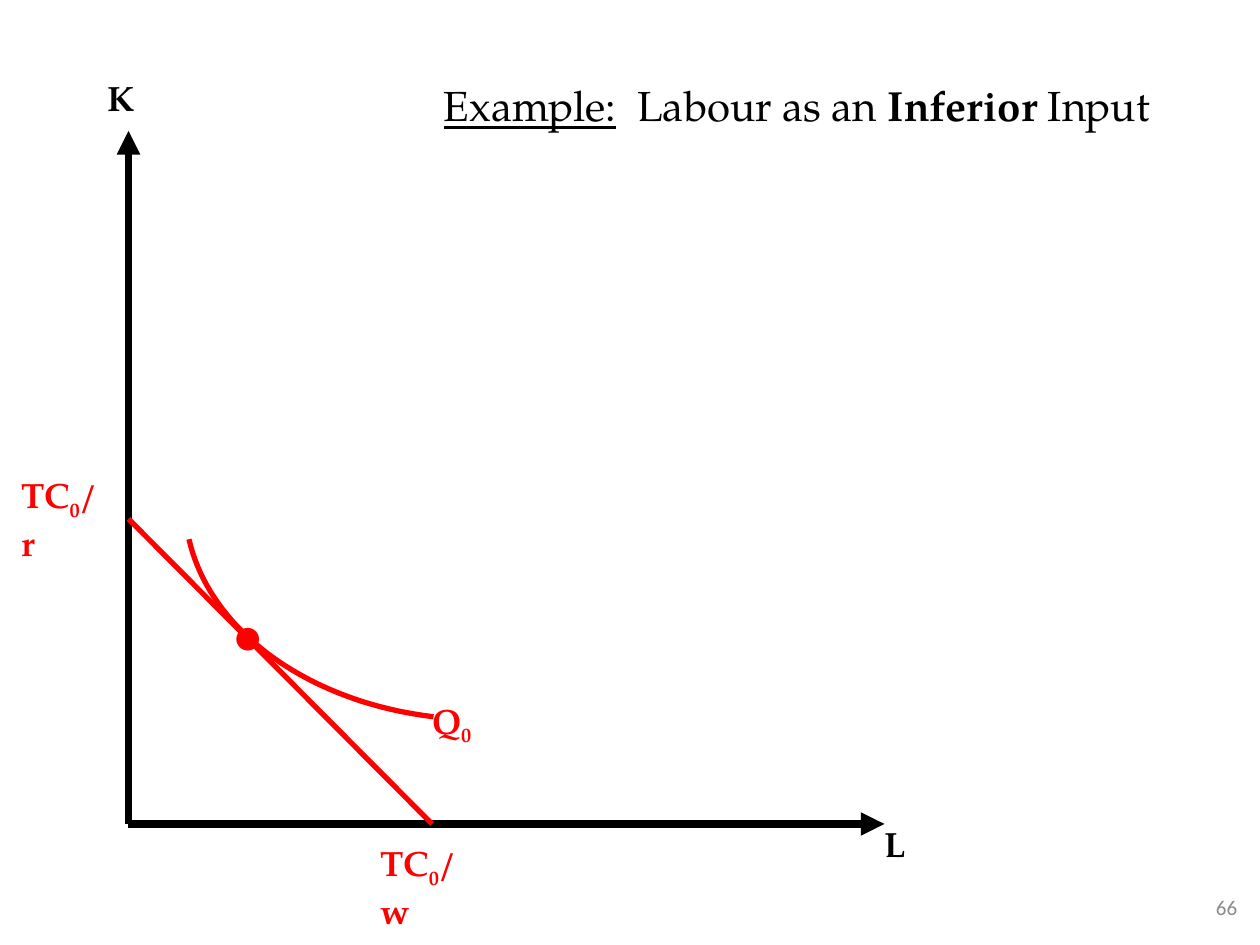
from lxml import etree
from pptx import Presentation
from pptx.dml.color import RGBColor
from pptx.enum.shapes import MSO_CONNECTOR
from pptx.enum.text import MSO_ANCHOR, MSO_AUTO_SIZE, PP_ALIGN
from pptx.oxml.ns import qn
from pptx.util import Cm, Pt

STRAIGHT = MSO_CONNECTOR.STRAIGHT
TOP, MIDDLE = MSO_ANCHOR.TOP, MSO_ANCHOR.MIDDLE
LEFT, RIGHT = PP_ALIGN.LEFT, PP_ALIGN.RIGHT
NO_AUTOSIZE = MSO_AUTO_SIZE.NONE

COLOURS = {"axis": "000000", "cost": "FF0000", "number": "8C8C8C"}
SERIF = "TeX Gyre Pagella"

# Diagram geometry in centimetres
ORIGIN = (2.59, 16.61)
LABOUR_END = (17.83, ORIGIN[1])
CAPITAL_END = (ORIGIN[0], 2.64)
COST_ON_CAPITAL = (ORIGIN[0], 10.46)
COST_ON_LABOUR = (8.71, ORIGIN[1])
ISOQUANT = ((8.74, 14.45), (6.22, 14.15), (4.24, 12.73), (3.81, 10.87))
CURVE_STEPS = 40


def colour(name):
    return RGBColor.from_string(COLOURS[name])


def add_run(paragraph, text, size, colour_name, font=SERIF, bold=False,
            underline=False, subscript=False):
    run = paragraph.add_run()
    run.text = text
    run.font.name = font
    run.font.size = Pt(size)
    run.font.bold = bold
    run.font.underline = underline
    run.font.color.rgb = colour(colour_name)
    if subscript:
        run.font._element.set("baseline", "-25000")


def add_text_box(slide, left, top, width, height, wrap=True):
    shape = slide.shapes.add_textbox(Cm(left), Cm(top), Cm(width), Cm(height))
    shape.text_frame.word_wrap = wrap
    return shape.text_frame


def add_label(slide, position, colour_name, text, subscript="", suffix="",
              wrap=False):
    frame = add_text_box(slide, *position, wrap=wrap)
    paragraph = frame.paragraphs[0]
    for part in (text, subscript, suffix):
        if part:
            add_run(paragraph, part, 20, colour_name, bold=True,
                    subscript=part == subscript)


def add_line(slide, start, end, colour_name, width, arrow=False):
    connector = slide.shapes.add_connector(
        STRAIGHT, *(Cm(value) for value in start + end))
    connector.line.color.rgb = colour(colour_name)
    connector.line.width = Pt(width)
    if arrow:
        line = connector.line._get_or_add_ln()
        etree.SubElement(line, qn("a:tailEnd"), type="triangle")
    etree.SubElement(connector._element.spPr, qn("a:effectLst"))


def bezier_point(controls, t):
    weights = ((1 - t) ** 3, 3 * t * (1 - t) ** 2, 3 * t ** 2 * (1 - t), t ** 3)
    return tuple(Cm(sum(weight * control[axis]
                        for weight, control in zip(weights, controls)))
                 for axis in (0, 1))


def add_curve(slide, controls, colour_name, width):
    points = [bezier_point(controls, step / CURVE_STEPS)
              for step in range(CURVE_STEPS + 1)]
    builder = slide.shapes.build_freeform(*points[0])
    builder.add_line_segments(points[1:], close=False)
    shape = builder.convert_to_shape()
    shape.shadow.inherit = False
    shape.fill.background()
    shape.line.color.rgb = colour(colour_name)
    shape.line.width = Pt(width)


def add_title(slide):
    title = slide.shapes.title
    title.left, title.top, title.width, title.height = (
        Cm(8.69), Cm(1.47), Cm(15.24), Cm(1.27))
    frame = title.text_frame
    frame.auto_size = NO_AUTOSIZE
    frame.vertical_anchor = TOP
    paragraph = frame.paragraphs[0]
    paragraph.alignment = LEFT
    add_run(paragraph, "Example:", 24, "axis", underline=True)
    add_run(paragraph, "  Labour as an ", 24, "axis")
    add_run(paragraph, "Inferior", 24, "axis", bold=True)
    add_run(paragraph, " Input", 24, "axis")


def add_slide_number(slide, number):
    frame = add_text_box(slide, 23.29, 17.78, 1.9, 1.02)
    frame.vertical_anchor = MIDDLE
    paragraph = frame.paragraphs[0]
    paragraph.alignment = RIGHT
    add_run(paragraph, number, 12, "number", font="Calibri")


def main():
    presentation = Presentation()
    presentation.slide_width, presentation.slide_height = Cm(25.4), Cm(19.05)
    slide = presentation.slides.add_slide(presentation.slide_layouts[5])

    add_slide_number(slide, "66")
    add_title(slide)

    # Axes
    add_line(slide, ORIGIN, LABOUR_END, "axis", 4.5, arrow=True)
    add_line(slide, ORIGIN, CAPITAL_END, "axis", 4.5, arrow=True)
    add_label(slide, (17.58, 16.46, 0.94, 1.09), "axis", "L")
    add_label(slide, (1.91, 1.42, 1.07, 1.09), "axis", "K")

    # Isocost line with its intercepts
    add_line(slide, COST_ON_CAPITAL, COST_ON_LABOUR, "cost", 3)
    add_label(slide, (7.42, 16.84, 2.51, 1.09), "cost", "TC", "0", "/w",
              wrap=True)
    add_label(slide, (0.18, 9.42, 2.21, 1.09), "cost", "TC", "0", "/r",
              wrap=True)

    # Isoquant and tangency point
    add_label(slide, (8.46, 13.97, 1.32, 1.09), "cost", "Q", "0")
    add_curve(slide, ISOQUANT, "cost", 3)
    tangency = add_text_box(slide, 4.45, 11.63, 1.09, 2.29, wrap=False)
    add_run(tangency.paragraphs[0], "•", 48, "cost",
            font="Times New Roman", bold=True)

    presentation.save("out.pptx")


if __name__ == "__main__":
    main()
